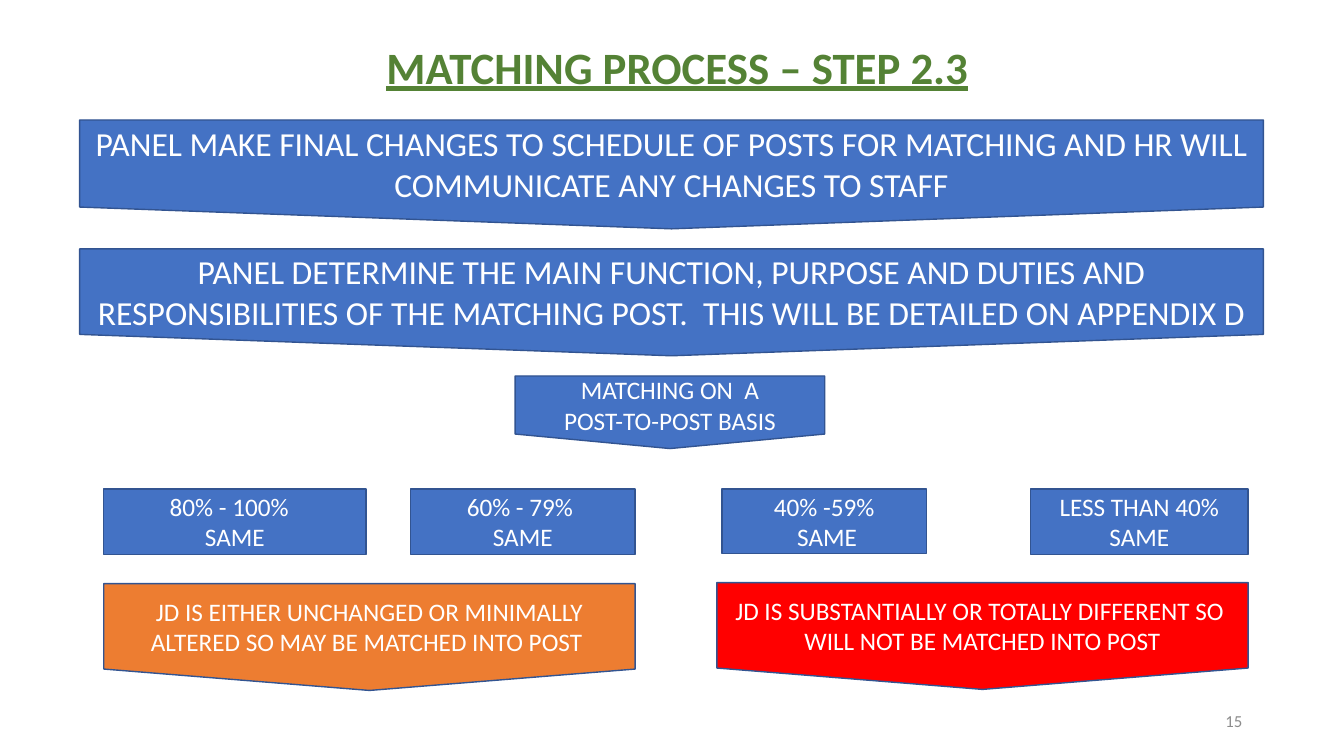
"""Build the matching process slide for step 2.3."""
from pptx import Presentation
from pptx.dml.color import RGBColor
from pptx.enum.shapes import MSO_SHAPE as Shape
from pptx.enum.text import MSO_ANCHOR as Anchor, MSO_AUTO_SIZE as Fit, PP_ALIGN as Align
from pptx.util import Inches, Pt

BLUE, EDGE, WHITE = "4472C4", "325491", "FFFFFF"
ORANGE, RED, GREEN, GREY = "ED7D31", "FF0000", "548235", "8C8C8C"
FLAG, RECT, STEP = Shape.FLOWCHART_OFFPAGE_CONNECTOR, Shape.RECTANGLE, Shape.FLOWCHART_PROCESS

PANELS = [
    (1.19, 1.08, "PANEL MAKE FINAL CHANGES TO SCHEDULE OF POSTS FOR MATCHING "
                 "AND HR WILL COMMUNICATE ANY CHANGES TO STAFF"),
    (2.47, 1.06, "PANEL DETERMINE THE MAIN FUNCTION, PURPOSE AND DUTIES AND "
                 "RESPONSIBILITIES OF THE MATCHING POST.  THIS WILL BE DETAILED ON APPENDIX D"),
]
BANDS = [
    (RECT, 1.03, 2.6, 0.65, "80% - 100%  \nSAME"),
    (STEP, 4.07, 2.23, 0.65, "60% - 79% \nSAME"),
    (STEP, 7.16, 2.03, 0.64, "40% -59%\n SAME"),
    (STEP, 10.22, 2.16, 0.65, "LESS THAN 40% SAME"),
]
RESULTS = [
    (1.03, 5.79, ORANGE, "JD IS EITHER UNCHANGED OR MINIMALLY ALTERED SO MAY BE MATCHED INTO POST "),
    (7.11, 5.78, RED, "JD IS SUBSTANTIALLY OR TOTALLY DIFFERENT SO  WILL NOT BE MATCHED INTO POST"),
]


def color(code):
    return RGBColor.from_string(code)


def write(item, text, size, code, align=Align.CENTER, anchor=Anchor.MIDDLE, strong=False):
    frame = item.text_frame
    frame.text = text
    frame.word_wrap = True
    frame.auto_size = Fit.NONE
    frame.vertical_anchor = anchor
    for para in frame.paragraphs:
        para.alignment = align
        for run in para.runs:
            font = run.font
            font.name, font.size = "Calibri", Pt(size)
            font.bold = font.underline = strong
            font.color.rgb = color(code)


def add_box(slide, kind, place, text, size=18, fill=BLUE):
    box = slide.shapes.add_shape(kind, *map(Inches, place))
    box.shadow.inherit = False
    box.fill.solid()
    box.fill.fore_color.rgb = color(fill)
    box.line.color.rgb = color(EDGE)
    box.line.width = Pt(1)
    write(box, text, size, WHITE)


def add_title(slide, text):
    title = slide.shapes.title
    title.left, title.top, title.width, title.height = map(Inches, (2.73, 0.34, 7.98, 0.64))
    write(title, text, 32, GREEN, anchor=Anchor.TOP, strong=True)


def add_number(slide, text):
    box = slide.shapes.add_textbox(*map(Inches, (9.42, 6.95, 3, 0.4)))
    write(box, text, 12, GREY, align=Align.RIGHT)


def main():
    deck = Presentation()
    deck.slide_width, deck.slide_height = Inches(13.33), Inches(7.5)
    slide = deck.slides.add_slide(deck.slide_layouts[5])
    add_title(slide, "MATCHING PROCESS – STEP 2.3")
    for top, high, text in PANELS:
        add_box(slide, FLAG, (0.79, top, 11.74, high), text, size=24)
    add_box(slide, FLAG, (5.11, 3.73, 3.07, 0.72), "MATCHING ON  A\nPOST-TO-POST BASIS")
    for kind, left, wide, high, text in BANDS:
        add_box(slide, kind, (left, 4.85, wide, high), text)
    for left, top, fill, text in RESULTS:
        add_box(slide, FLAG, (left, top, 5.27, 1.06), text, fill=fill)
    add_number(slide, "15")
    deck.save("out.pptx")


if __name__ == "__main__":
    main()
